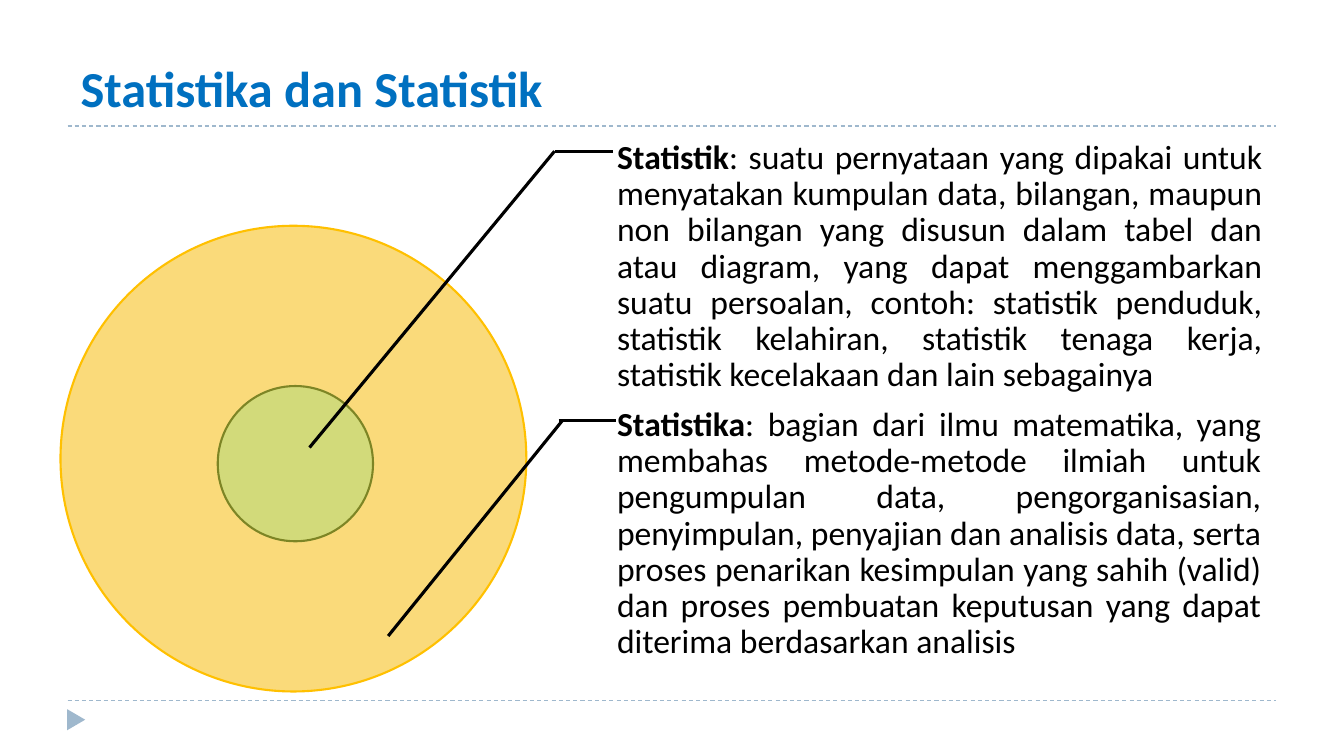
"""Build the slide that explains the difference between statistika and statistik."""
import pptx
import pptx.dml.color
import pptx.enum.dml
import pptx.enum.shapes
import pptx.enum.text
import pptx.oxml.ns
import pptx.util

Inches = pptx.util.Inches
Pt = pptx.util.Pt
SHAPE = pptx.enum.shapes.MSO_SHAPE
ANCHOR = pptx.enum.text.MSO_ANCHOR
ALIGN = pptx.enum.text.PP_ALIGN

THEME = {
    "font": "Calibri", "title_size": 36, "body_size": 24,
    "title": "0070C0", "text": "000000", "rule": "9FB8CD",
    "rule_width": 0.75, "circle_width": 1.5, "leader_width": 2.25,
}

TITLE = "Statistika dan Statistik"
TITLE_BOX = (0.68, 0.15, 12, 1.08)
TITLE_INSETS = (0.12, 0.06, 0.12, 0.06)

RULE_LEFT, RULE_RIGHT = 0.67, 12.66
RULE_TOPS = (6.95, 1.25)
MARKER_BOX = (0.65, 7.05, 0.21, 0.18)

CIRCLES = [
    {"left": 0.6, "top": 2.24, "size": 4.62, "fill": "FADA7A", "line": "FFC000"},
    {"left": 2.16, "top": 3.83, "size": 1.54, "fill": "D2DA7A", "line": "7D8525"},
]

DEFINITION_INSETS = (0.19, 0.03, 0.03, 0.03)
DEFINITIONS = [
    {
        "term": "Statistik",
        "meaning": ": suatu pernyataan yang dipakai untuk menyatakan kumpulan data, "
                   "bilangan, maupun non bilangan yang disusun dalam tabel dan atau "
                   "diagram, yang dapat menggambarkan suatu persoalan, contoh: statistik "
                   "penduduk, statistik kelahiran, statistik tenaga kerja, statistik "
                   "kecelakaan dan lain sebagainya",
        "box": (5.93, 1.29, 6.62, 2.72),
        "leader": [(5.5, 1.5, 6.08, 1.5), (5.5, 1.5, 3.07, 4.44)],
    },
    {
        "term": "Statistika",
        "meaning": ": bagian dari ilmu matematika, yang membahas metode-metode ilmiah "
                   "untuk pengumpulan data, pengorganisasian, penyimpulan, penyajian dan "
                   "analisis data, serta proses penarikan kesimpulan yang sahih (valid) "
                   "dan proses pembuatan keputusan yang dapat diterima berdasarkan analisis",
        "box": (5.93, 3.93, 6.61, 2.74),
        "leader": [(5.54, 4.17, 6.11, 4.17), (5.58, 4.17, 3.85, 6.31)],
    },
]


def rgb(value):
    """Turn a hex string into a colour."""
    return pptx.dml.color.RGBColor.from_string(value)


def add_line(slide, ends, color, width, dash=None):
    """Draw a straight line without a shadow."""
    line = slide.shapes.add_connector(
        pptx.enum.shapes.MSO_CONNECTOR.STRAIGHT, *map(Inches, ends))
    line.line.color.rgb = rgb(color)
    line.line.width = Pt(width)
    if dash:
        line.line.dash_style = dash
    properties = line._element.spPr
    properties.append(properties.makeelement(pptx.oxml.ns.qn("a:effectLst"), {}))


def add_figure(slide, kind, box, fill, line=None):
    """Draw a filled preset shape, outlined when a line colour is given."""
    figure = slide.shapes.add_shape(kind, *map(Inches, box))
    figure.shadow.inherit = False
    figure.fill.solid()
    figure.fill.fore_color.rgb = rgb(fill)
    if line:
        figure.line.color.rgb = rgb(line)
        figure.line.width = Pt(THEME["circle_width"])
    else:
        figure.line.fill.background()
    return figure


def add_text(slide, box, insets, anchor, runs, size, color):
    """Write one paragraph of (text, bold) runs and return it."""
    frame = slide.shapes.add_textbox(*map(Inches, box)).text_frame
    frame.word_wrap = True
    frame.vertical_anchor = anchor
    (frame.margin_left, frame.margin_top,
     frame.margin_right, frame.margin_bottom) = map(Inches, insets)
    paragraph = frame.paragraphs[0]
    for text, bold in runs:
        run = paragraph.add_run()
        run.text = text
        run.font.name = THEME["font"]
        run.font.size = Pt(size)
        run.font.bold = bold
        run.font.color.rgb = rgb(color)
    return paragraph


def main():
    """Assemble and save the slide."""
    deck = pptx.Presentation()
    deck.slide_width, deck.slide_height = Inches(13.33), Inches(7.5)
    slide = deck.slides.add_slide(deck.slide_layouts[6])

    for top in RULE_TOPS:
        add_line(slide, (RULE_LEFT, top, RULE_RIGHT, top), THEME["rule"],
                 THEME["rule_width"], pptx.enum.dml.MSO_LINE.DASH)
    marker = add_figure(slide, SHAPE.ISOSCELES_TRIANGLE, MARKER_BOX, THEME["rule"])
    marker.rotation = 90

    add_text(slide, TITLE_BOX, TITLE_INSETS, ANCHOR.BOTTOM, [(TITLE, True)],
             THEME["title_size"], THEME["title"])

    for circle in CIRCLES:
        box = (circle["left"], circle["top"], circle["size"], circle["size"])
        add_figure(slide, SHAPE.OVAL, box, circle["fill"], circle["line"])

    for definition in DEFINITIONS:
        runs = [(definition["term"], True), (definition["meaning"], False)]
        paragraph = add_text(slide, definition["box"], DEFINITION_INSETS, ANCHOR.MIDDLE,
                             runs, THEME["body_size"], THEME["text"])
        paragraph.alignment = ALIGN.JUSTIFY
        paragraph.line_spacing = 0.9
        paragraph.space_after = Pt(0.35 * THEME["body_size"])
        for ends in definition["leader"]:
            add_line(slide, ends, THEME["text"], THEME["leader_width"])

    deck.save("out.pptx")


if __name__ == "__main__":
    main()
